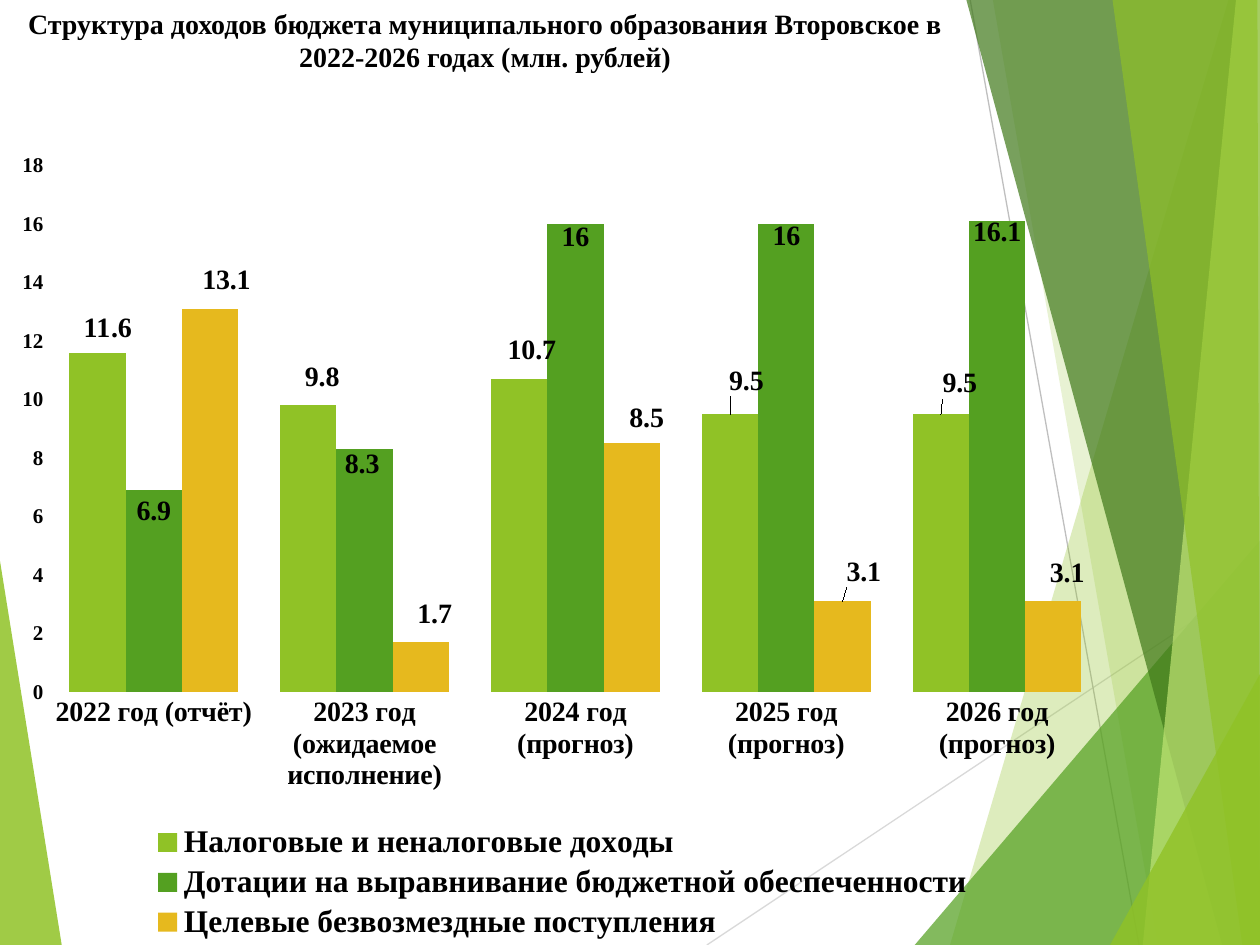
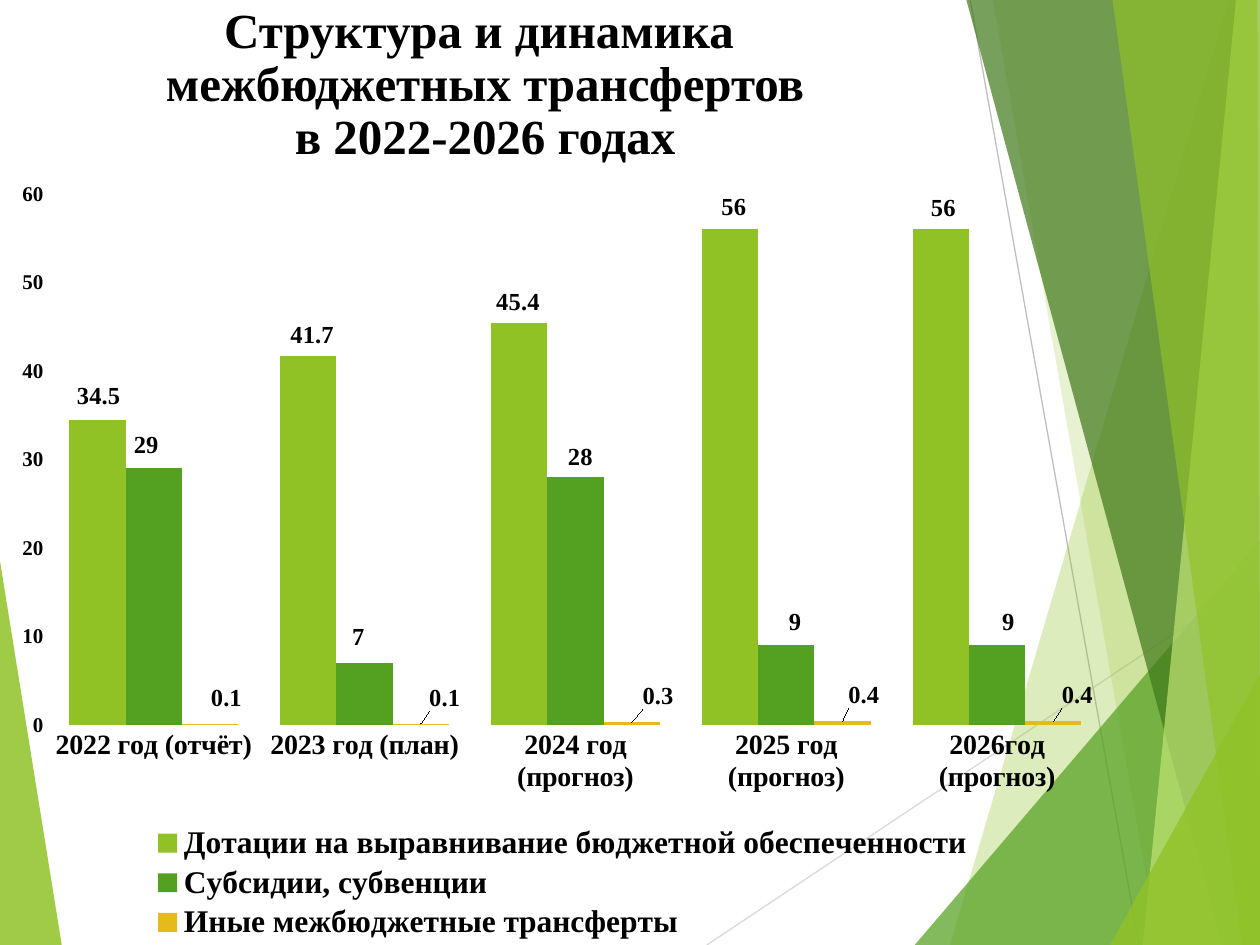
from itertools import chain

from lxml import etree
from pptx import Presentation
from pptx.chart.data import CategoryChartData
from pptx.dml.color import RGBColor
from pptx.enum.chart import XL_CHART_TYPE, XL_LABEL_POSITION, XL_LEGEND_POSITION, XL_TICK_MARK
from pptx.enum.shapes import MSO_CONNECTOR
from pptx.enum.text import MSO_ANCHOR, PP_ALIGN
from pptx.oxml.ns import qn
from pptx.util import Inches, Pt

COLUMNS = XL_CHART_TYPE.COLUMN_CLUSTERED
STRAIGHT = MSO_CONNECTOR.STRAIGHT
BOTTOM = XL_LEGEND_POSITION.BOTTOM
ABOVE_BAR = XL_LABEL_POSITION.OUTSIDE_END
NO_TICK = XL_TICK_MARK.NONE
TOP = MSO_ANCHOR.TOP
CENTER = PP_ALIGN.CENTER

W, H = 10, 7.5
FONT, CHART_FONT = "Times New Roman", "Roboto"
BLACK, LIME, GREEN, GOLD = "000000", "90C226", "54A021", "E6B91E"
DARK_GREEN, PALE_LIME = "3F7819", "C0E474"
SERIES_COLORS = [LIME, GREEN, GOLD]
CHART_WIDTH = 89.3

LEFT_FACET = (LIME, 85, [(-0.1, 58.53), (4.9, 100), (-0.1, 100)])
RAYS = [("D9D9D9", (56.1, 100), (100, 61)), ("BFBFBF", (77, 0), (90.4, 100))]
RIGHT_FACETS = [
    (LIME, 30, [(97.5, 0), (75.4, 100), (100, 100), (100, 0)]),
    (LIME, 20, [(78.8, 0), (91.9, 100), (100, 100), (100, 0)]),
    (GREEN, 72, [(72.6, 100), (100, 57.2), (100, 100)]),
    (DARK_GREEN, 70, [(76.7, 0), (97, 100), (100, 100), (100, 0)]),
    (PALE_LIME, 70, [(98.1, 0), (90.7, 100), (100, 100), (100, 0)]),
    (LIME, 65, [(88.3, 0), (98.6, 100), (100, 100), (99.8, 0)]),
    (LIME, 80, [(88.1, 100), (100, 71.33), (100, 100)]),
]

INCOME = {
    "top": 14.53, "axis_max": 18, "axis_step": 2, "label_size": 16,
    "plot_share": (0.035, 0.652), "legend_top": 0.845,
    "categories": ["2022 год (отчёт)", "2023 год (ожидаемое исполнение)",
                   "2024 год (прогноз)", "2025 год (прогноз)", "2026 год (прогноз)"],
    "series": [
        ("Налоговые и неналоговые доходы", [11.6, 9.8, 10.7, 9.5, 9.5],
         [(8, -3), (11, -6), (10, -6), (13, -10), (15, -8)]),
        ("Дотации на выравнивание бюджетной обеспеченности", [6.9, 8.3, 16, 16, 16.1],
         [(0, 33), (-2, 28), (0, 27), (0, 26), (0, 25)]),
        ("Целевые безвозмездные поступления", [13.1, 1.7, 8.5, 3.1, 3.1],
         [(13, -6), (11, -6), (12, -4), (17, -7), (11, -6)]),
    ],
}
TRANSFERS = {
    "top": 17.73, "axis_max": 60, "axis_step": 10, "label_size": 14,
    "plot_share": (0.034, 0.683), "legend_top": 0.84,
    "categories": ["2022 год (отчёт)", "2023 год (план)",
                   "2024 год (прогноз)", "2025 год (прогноз)", "2026год (прогноз)"],
    "series": [
        ("Дотации на выравнивание бюджетной обеспеченности", [34.5, 41.7, 45.4, 56, 56],
         [(1, -4), (3, -2), (-1, -2), (3, -3), (2, -2)]),
        ("Субсидии, субвенции", [29, 7, 28, 9, 9],
         [(-6, -4), (-5, -6), (4, -1), (7, -4), (9, -4)]),
        ("Иные межбюджетные трансферты", [0.1, 0.1, 0.3, 0.4, 0.4],
         [(13, -6), (19, -6), (21, -6), (17, -6), (19, -6)]),
    ],
}


def rgb(value):
    return RGBColor.from_string(value)


def at(x, y):
    return Inches(x * W / 100), Inches(y * H / 100)


def style_font(font, size, bold=True, name=FONT, color=BLACK):
    font.size, font.bold, font.name = Pt(size), bold, name
    font.color.rgb = rgb(color)


def add_text(slide, text, left=0, top=0, width=77, height=15, size=16, spacing=None):
    box = slide.shapes.add_textbox(*at(left, top), *at(width, height))
    tf = box.text_frame
    tf.word_wrap = True
    tf.vertical_anchor = TOP
    p = tf.paragraphs[0]
    p.text = text
    p.alignment = CENTER
    p.line_spacing = spacing
    for r in p.runs:
        style_font(r.font, size)


def add_facet(slide, color, opacity, corners):
    points = [at(*corner) for corner in corners]
    builder = slide.shapes.build_freeform(*points[0])
    builder.add_line_segments(points[1:], close=True)
    sp = builder.convert_to_shape()
    sp.shadow.inherit = False
    sp.line.fill.background()
    sp.fill.solid()
    sp.fill.fore_color.rgb = rgb(color)
    for clr in sp.element.iter(qn("a:srgbClr")):
        etree.SubElement(clr, qn("a:alpha"), val=str(opacity * 1000))


def add_ray(slide, color, start, end):
    ray = slide.shapes.add_connector(STRAIGHT, *at(*start), *at(*end))
    ray.line.color.rgb = rgb(color)
    ray.line.width = Pt(0.75)
    etree.SubElement(ray.element.spPr, qn("a:effectLst"))


def add_facets(slide):
    add_facet(slide, *LEFT_FACET)
    for ray in RAYS:
        add_ray(slide, *ray)
    for facet in RIGHT_FACETS:
        add_facet(slide, *facet)


def set_layout(parent, index, **values):
    for old in parent.findall(qn("c:layout")):
        parent.remove(old)
    layout = etree.Element(qn("c:layout"))
    manual = etree.SubElement(layout, qn("c:manualLayout"))
    for tag, value in values.items():
        etree.SubElement(manual, qn(f"c:{tag}"), val=str(value))
    parent.insert(index, layout)


def style_axis(axis, size):
    axis.has_major_gridlines = False
    axis.major_tick_mark = axis.minor_tick_mark = NO_TICK
    axis.format.line.fill.background()
    style_font(axis.tick_labels.font, size)


def style_series(series, color, label_size):
    series.format.fill.solid()
    series.format.fill.fore_color.rgb = rgb(color)
    series.invert_if_negative = False
    series.data_labels.show_value = True
    style_font(series.data_labels.font, label_size)
    for i in range(len(series.values)):
        label = series.points[i].data_label
        style_font(label.font, label_size)
        label.position = ABOVE_BAR


def add_column_chart(slide, content):
    data = CategoryChartData()
    data.categories = content["categories"]
    for name, values, _ in content["series"]:
        data.add_series(name, values)
    height = 100 - content["top"]
    chart = slide.shapes.add_chart(COLUMNS, *at(0, content["top"]),
                                   *at(CHART_WIDTH, height), data).chart
    chart.has_title = False
    style_font(chart.font, 10, bold=False, name=CHART_FONT)
    style_axis(chart.category_axis, 16)
    style_axis(chart.value_axis, 12)
    chart.value_axis.minimum_scale = 0
    chart.value_axis.maximum_scale = content["axis_max"]
    chart.value_axis.major_unit = content["axis_step"]

    plot = chart.plots[0]
    plot.gap_width = 75
    plot.vary_by_categories = False
    for series, color in zip(plot.series, SERIES_COLORS):
        style_series(series, color, content["label_size"])

    nudges = chain.from_iterable(moves for _, _, moves in content["series"])
    for label, (dx, dy) in zip(chart.element.iter(qn("c:dLbl")), nudges):
        set_layout(label, 1, x=round(dx / (CHART_WIDTH * W), 4),
                   y=round(dy / (height * H), 4))

    chart.has_legend = True
    chart.legend.position = BOTTOM
    chart.legend.include_in_layout = False
    style_font(chart.legend.font, 18)
    legend_top = content["legend_top"]
    set_layout(next(chart.element.iter(qn("c:legend"))), 1, xMode="edge", yMode="edge",
               x=0.13, y=legend_top, w=0.74, h=round(1 - legend_top, 3))
    plot_top, plot_height = content["plot_share"]
    set_layout(next(chart.element.iter(qn("c:plotArea"))), 0, layoutTarget="inner",
               xMode="edge", yMode="edge", x=0.043, y=plot_top, w=0.937, h=plot_height)


def add_chart_slide(prs, title, content, **title_format):
    slide = prs.slides.add_slide(prs.slide_layouts[6])
    add_facets(slide)
    add_text(slide, title, **title_format)
    add_column_chart(slide, content)


def main():
    prs = Presentation()
    prs.slide_width, prs.slide_height = Inches(W), Inches(H)
    add_chart_slide(prs, "Структура доходов бюджета муниципального образования "
                    "Второвское в 2022-2026 годах (млн. рублей)", INCOME)
    add_chart_slide(prs, "Структура и динамика \vмежбюджетных трансфертов\v"
                    "в 2022-2026 годах", TRANSFERS, size=28, spacing=0.9)
    prs.save("out.pptx")


if __name__ == "__main__":
    main()
